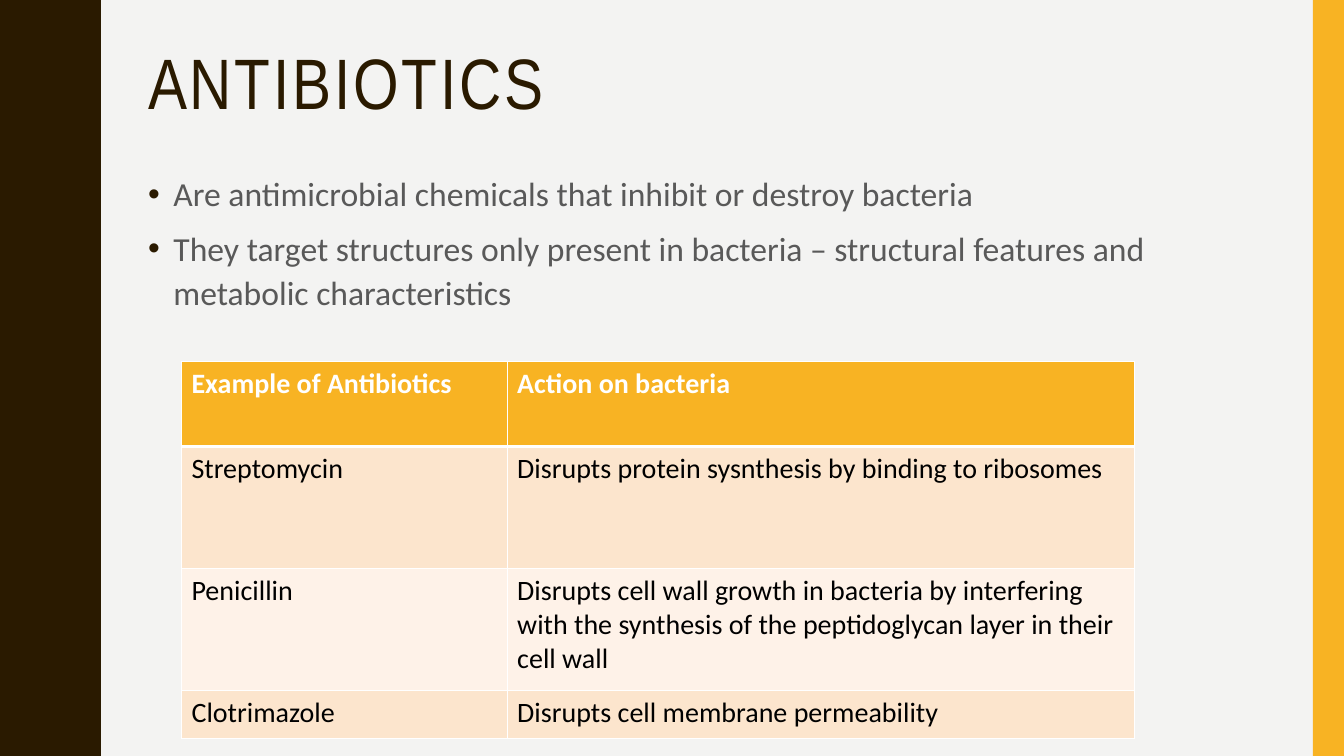
from lxml.etree import SubElement
from pptx import Presentation
from pptx.dml.color import RGBColor
from pptx.enum.shapes import MSO_SHAPE
from pptx.enum.text import MSO_ANCHOR, MSO_AUTO_SIZE, PP_ALIGN
from pptx.oxml.ns import qn
from pptx.util import Inches, Pt

BROWN, AMBER, GREY = "2A1A00", "F8B323", "595959"
WHITE, BLACK, PAPER = "FFFFFF", "000000", "F3F3F2"
PEACH, CREAM = "FCE5CD", "FEF2E8"

POINTS = [
    "Are antimicrobial chemicals that inhibit or destroy bacteria",
    "They target structures only present in bacteria – structural features "
    "and metabolic characteristics",
]
ANTIBIOTICS = [
    ("Example of Antibiotics", "Action on bacteria"),
    ("Streptomycin", "Disrupts protein sysnthesis by binding to ribosomes"),
    ("Penicillin", "Disrupts cell wall growth in bacteria by interfering with "
     "the synthesis of the peptidoglycan layer in their cell wall"),
    ("Clotrimazole", "Disrupts cell membrane permeability"),
]
COLUMN_WIDTHS = [3.23, 6.22]
ROW_HEIGHTS = [0.84, 1.21, 1.21, 0.48]

# Half a wave from trough to crest; the other half mirrors it
WAVE_PERIOD = 1.5
HALF_WAVE = [
    (0.78, 0), (0.78, 0.07), (0.79, 0.14), (0.8, 0.2), (0.81, 0.25),
    (0.83, 0.29), (0.85, 0.33), (0.87, 0.38), (0.89, 0.42), (0.91, 0.46),
    (0.93, 0.5), (0.95, 0.55), (0.96, 0.61), (0.97, 0.68), (0.97, 0.75),
]


def color(value):
    return RGBColor.from_string(value)


def style(paragraph, size, font, value, bold=False):
    for run in paragraph.runs:
        run.font.size = Pt(size)
        run.font.name = font
        run.font.bold = bold
        run.font.color.rgb = color(value)


def paint(shape, value):
    shape.shadow.inherit = False
    shape.fill.solid()
    shape.fill.fore_color.rgb = color(value)
    shape.line.fill.background()


def place(shape, left, top, width, height):
    shape.left, shape.top = Inches(left), Inches(top)
    shape.width, shape.height = Inches(width), Inches(height)
    frame = shape.text_frame
    frame.word_wrap = True
    frame.auto_size = MSO_AUTO_SIZE.NONE
    frame.vertical_anchor = MSO_ANCHOR.TOP
    return frame


def add_wave(slide, left, top, height):
    period = HALF_WAVE + [(x, WAVE_PERIOD - y) for x, y in HALF_WAVE[-2::-1]]
    edge = [(x, y + n * WAVE_PERIOD)
            for n in range(round(height / WAVE_PERIOD)) for x, y in period]
    builder = slide.shapes.build_freeform(0, 0, scale=Inches(1))
    builder.add_line_segments(edge + [(0, height)], close=True)
    paint(builder.convert_to_shape(Inches(left), Inches(top)), BROWN)


def add_side_bar(slide, left, top, width, height):
    bar = slide.shapes.add_shape(MSO_SHAPE.RECTANGLE, Inches(left), Inches(top),
                                 Inches(width), Inches(height))
    paint(bar, AMBER)


def fill_title(slide, text, *box):
    frame = place(slide.shapes.title, *box)
    frame.text = text
    heading = frame.paragraphs[0]
    heading.alignment = PP_ALIGN.LEFT
    heading.line_spacing = 0.9
    style(heading, 51, "Arial Narrow", BROWN)
    heading.runs[0].font._element.set("spc", "200")


def fill_points(slide, points, *box):
    frame = place(slide.placeholders[1], *box)
    frame.text = "\n".join(points)
    for point in frame.paragraphs:
        point.line_spacing = 1.1
        point.space_before = Pt(7)
        style(point, 24, "Calibri", GREY)
        # Hanging bullet in the title colour
        props = point._p.get_or_add_pPr()
        props.set("marL", str(Inches(0.25)))
        props.set("indent", str(-Inches(0.25)))
        bullet_color = SubElement(props, qn("a:buClr"))
        SubElement(bullet_color, qn("a:srgbClr"), val=BROWN)
        SubElement(props, qn("a:buFont"), typeface="Arial")
        SubElement(props, qn("a:buChar"), char="•")


def add_borders(cell, top, bottom):
    props = cell._tc.get_or_add_tcPr()
    for side, width in (("L", 1), ("R", 1), ("T", top), ("B", bottom)):
        line = SubElement(props, qn(f"a:ln{side}"), w=str(Pt(width)))
        SubElement(SubElement(line, qn("a:solidFill")), qn("a:srgbClr"), val=WHITE)


def add_antibiotics_table(slide, left, top):
    table = slide.shapes.add_table(
        len(ROW_HEIGHTS), len(COLUMN_WIDTHS), Inches(left), Inches(top),
        Inches(sum(COLUMN_WIDTHS)), Inches(sum(ROW_HEIGHTS))).table
    for column, width in zip(table.columns, COLUMN_WIDTHS):
        column.width = Inches(width)
    for r, (row, height) in enumerate(zip(table.rows, ROW_HEIGHTS)):
        row.height = Inches(height)
        header = r == 0
        band = AMBER if header else PEACH if r % 2 else CREAM
        for cell, text in zip(row.cells, ANTIBIOTICS[r]):
            cell.text = text
            style(cell.text_frame.paragraphs[0], 20, "Calibri",
                  WHITE if header else BLACK, bold=header)
            add_borders(cell, top=3 if r == 1 else 1, bottom=3 if header else 1)
            cell.fill.solid()
            cell.fill.fore_color.rgb = color(band)


def main():
    deck = Presentation()
    deck.slide_width, deck.slide_height = Inches(13.33), Inches(7.5)
    slide = deck.slides.add_slide(deck.slide_layouts[1])
    slide.background.fill.solid()
    slide.background.fill.fore_color.rgb = color(PAPER)

    # Side decorations
    add_wave(slide, 0, 0, 7.5)
    add_side_bar(slide, 13.02, 0, 0.31, 7.5)

    # Content
    fill_title(slide, "ANTIBIOTICS", 1.37, 0.42, 11.13, 1.63)
    fill_points(slide, POINTS, 1.37, 1.63, 11.13, 3.93)
    add_antibiotics_table(slide, 1.8, 3.59)
    deck.save("out.pptx")


if __name__ == "__main__":
    main()
